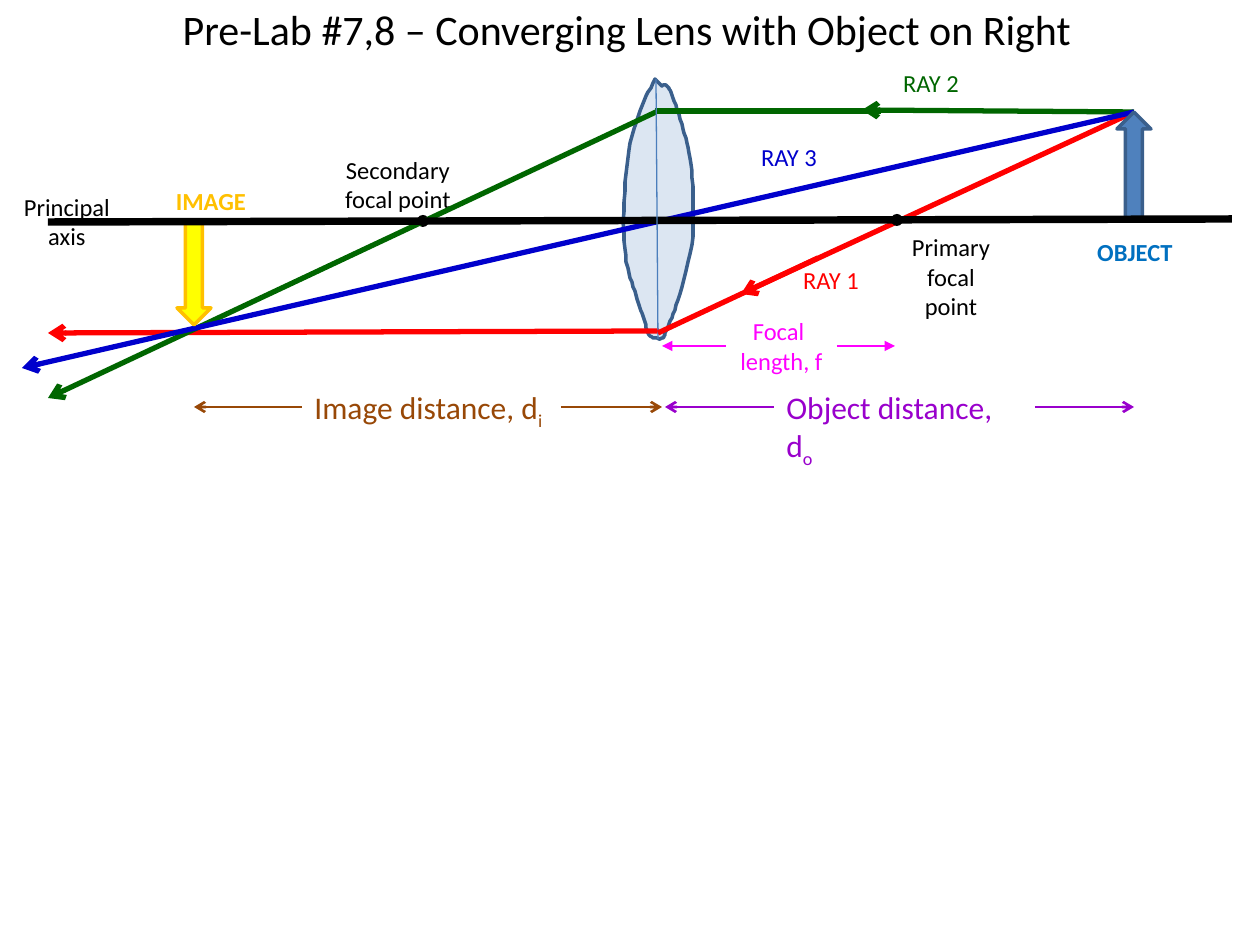
from lxml import etree
from pptx import Presentation
from pptx import util as u
from pptx.dml.color import RGBColor
from pptx.enum import shapes, text
from pptx.oxml import ns

SCALE = 914400 / 126
FONT = "Calibri"
COLORS = {
    "black": "000000", "red": "FF0000", "green": "006600", "blue": "0000CC",
    "purple": "9900CC", "brown": "984807", "magenta": "FF00FF",
    "object": "4F81BD", "object_label": "0070C0", "outline": "3A5F8C",
    "image": "FFFF00", "gold": "FFC000", "lens": "DCE6F2", "lens_axis": "4B7EBC",
}
LENS_START = (655, 79)
LENS_CURVES = [
    ((649, 91), (643, 101), (638, 117)),
    ((633, 132), (627, 152), (626, 174)),
    ((624, 195), (622, 229), (625, 249)),
    ((626, 268), (631, 280), (635, 291)),
    ((638, 302), (640, 309), (643, 316)),
    ((645, 324), (648, 333), (650, 336)),
    ((654, 339), (660, 339), (663, 338)),
    ((665, 336), (664, 335), (667, 329)),
    ((669, 323), (674, 315), (678, 300)),
    ((683, 285), (690, 258), (693, 237)),
    ((694, 215), (693, 189), (692, 171)),
    ((689, 152), (687, 141), (683, 129)),
    ((680, 116), (674, 102), (672, 95)),
    ((669, 87), (668, 87), (667, 86)),
    ((665, 84), (662, 86), (662, 86)),
]


def px(*lengths):
    """Turn pixel lengths into EMU."""
    return [u.Emu(round(length * SCALE)) for length in lengths]


def rgb(name):
    """Look up a colour by name."""
    return RGBColor.from_string(COLORS[name])


def add_run(paragraph, words, size, color, bold=None, baseline=None):
    """Add one formatted run to a paragraph."""
    run = paragraph.add_run()
    run.text = words
    run.font.name = FONT
    run.font.size = u.Pt(size)
    run.font.bold = bold
    run.font.color.rgb = rgb(color)
    if baseline:
        run.font._element.set("baseline", str(baseline))


def add_title(slide, words):
    """Fill and place the title placeholder."""
    title = slide.shapes.title
    title.left, title.top, title.width, title.height = px(60, -4, 1134, 66)
    title.text_frame.vertical_anchor = text.MSO_ANCHOR.MIDDLE
    paragraph = title.text_frame.paragraphs[0]
    paragraph.alignment = text.PP_ALIGN.CENTER
    add_run(paragraph, words, 24, "black")


def add_text_box(parent, box):
    """Add an empty wrapping text box."""
    shape = parent.shapes.add_textbox(*px(*box))
    shape.text_frame.word_wrap = True
    shape.text_frame.auto_size = text.MSO_AUTO_SIZE.SHAPE_TO_FIT_TEXT
    return shape


def add_label(slide, words, box, color, bold=None):
    """Add a centred 14 pt label."""
    frame = add_text_box(slide, box).text_frame
    frame.vertical_anchor = text.MSO_ANCHOR.MIDDLE
    frame.margin_left = frame.margin_right = frame.margin_bottom = 0
    frame.margin_top = u.Inches(0.1)
    paragraph = frame.paragraphs[0]
    paragraph.alignment = text.PP_ALIGN.CENTER
    add_run(paragraph, words, 14, color, bold)


def add_line(parent, start, end, color, width=3, head=None):
    """Add a straight line with an optional arrowhead at its end."""
    line = parent.shapes.add_connector(shapes.MSO_CONNECTOR.STRAIGHT, *px(*start, *end))
    line.line.color.rgb = rgb(color)
    line.line.width = u.Pt(width)
    if head:
        etree.SubElement(line.line._get_or_add_ln(), ns.qn("a:tailEnd"), type=head)
    etree.SubElement(line._element.spPr, ns.qn("a:effectLst"))
    return line


def paint(shape, fill, outline=None):
    """Set fill and outline and switch the shadow off."""
    shape.shadow.inherit = False
    shape.fill.solid()
    shape.fill.fore_color.rgb = rgb(fill)
    if outline:
        shape.line.color.rgb = rgb(outline)
        shape.line.width = u.Pt(2)
    else:
        shape.line.fill.background()


def add_shape(slide, kind, box, fill, outline=None):
    """Add a painted preset shape."""
    paint(slide.shapes.add_shape(kind, *px(*box)), fill, outline)


def curve_points(start, first, second, end, steps=8):
    """Sample a cubic Bézier curve."""
    for step in range(1, steps + 1):
        t = step / steps
        s = 1 - t
        yield tuple(s**3 * a + 3 * s * s * t * b + 3 * s * t * t * c + t**3 * d
                    for a, b, c, d in zip(start, first, second, end))


def add_lens(slide):
    """Draw the lens outline from its curves."""
    points, start = [], LENS_START
    for curve in LENS_CURVES:
        points += curve_points(start, *curve)
        start = curve[-1]
    builder = slide.shapes.build_freeform(*LENS_START, scale=SCALE)
    builder.add_line_segments(points, close=True)
    paint(builder.convert_to_shape(), "lens", "outline")


def add_distance(slide, box, ends, lines, size, color, head, alignment=None):
    """Add a grouped distance caption with an arrow on either side."""
    group = slide.shapes.add_group_shape()
    caption = add_text_box(group, box)
    frame = caption.text_frame
    for index, runs in enumerate(lines):
        paragraph = frame.add_paragraph() if index else frame.paragraphs[0]
        paragraph.alignment = alignment
        for words, baseline in runs:
            add_run(paragraph, words, size, color, baseline=baseline)
    left, top, width, height = box
    middle = top + height // 2
    for start, end, site in ((left, ends[0], 1), (left + width, ends[1], 3)):
        arrow = add_line(group, (start, middle), (end, middle), color, 1.5, head)
        arrow.begin_connect(caption, site)


def main():
    """Build the converging lens slide."""
    presentation = Presentation()
    presentation.slide_width, presentation.slide_height = px(1260, 945)
    slide = presentation.slides.add_slide(presentation.slide_layouts[5])
    kinds = shapes.MSO_SHAPE
    tip = (1134, 112)

    add_title(slide, "Pre-Lab #7,8 – Converging Lens with Object on Right")
    add_lens(slide)
    add_label(slide, "Primary focal point", (903, 219, 96, 102), "black")
    add_line(slide, (659, 331), (48, 333), "red", head="arrow")
    add_label(slide, "RAY 1", (783, 252, 96, 43), "red")
    add_line(slide, tip, (741, 294), "red", head="arrow")
    add_line(slide, tip, (862, 110), "green", head="arrow")
    add_line(slide, (655, 111), (881, 111), "green")
    add_label(slide, "Secondary focal point", (340, 142, 116, 72), "black")
    for left, top in ((417, 215), (891, 214)):
        add_shape(slide, kinds.OVAL, (left, top, 12, 12), "black")
    add_line(slide, (656, 112), (48, 398), "green", head="arrow")
    add_label(slide, "RAY 2", (883, 55, 96, 43), "green")
    add_label(slide, "RAY 3", (741, 129, 96, 43), "blue")
    add_line(slide, tip, (22, 368), "blue", head="arrow")
    add_shape(slide, kinds.UP_ARROW, (1117, 112, 34, 107), "object", "outline")
    add_shape(slide, kinds.DOWN_ARROW, (177, 222, 34, 103), "image", "gold")
    add_line(slide, (48, 222), (1232, 219), "black", 4.25)
    add_label(slide, "Principal axis", (22, 179, 90, 72), "black")
    add_label(slide, "OBJECT", (1077, 224, 116, 43), "object_label", True)
    add_label(slide, "IMAGE", (153, 173, 116, 43), "gold", True)
    add_line(slide, (656, 79), (658, 339), "lens_axis", 0.75)
    add_distance(slide, (774, 382, 261, 50), (665, 1134),
                 [[("Object distance, d", None), ("o", -25000)]], 18, "purple", "arrow")
    add_distance(slide, (302, 382, 259, 50), (194, 662),
                 [[("Image distance, d", None), ("i", -25000)]], 18, "brown", "arrow")
    add_distance(slide, (726, 310, 111, 72), (662, 895),
                 [[("Focal ", None)], [("length, f", None)]], 14, "magenta",
                 "triangle", text.PP_ALIGN.CENTER)
    add_line(slide, (818, 258), (658, 333), "red")
    presentation.save("out.pptx")


if __name__ == "__main__":
    main()
